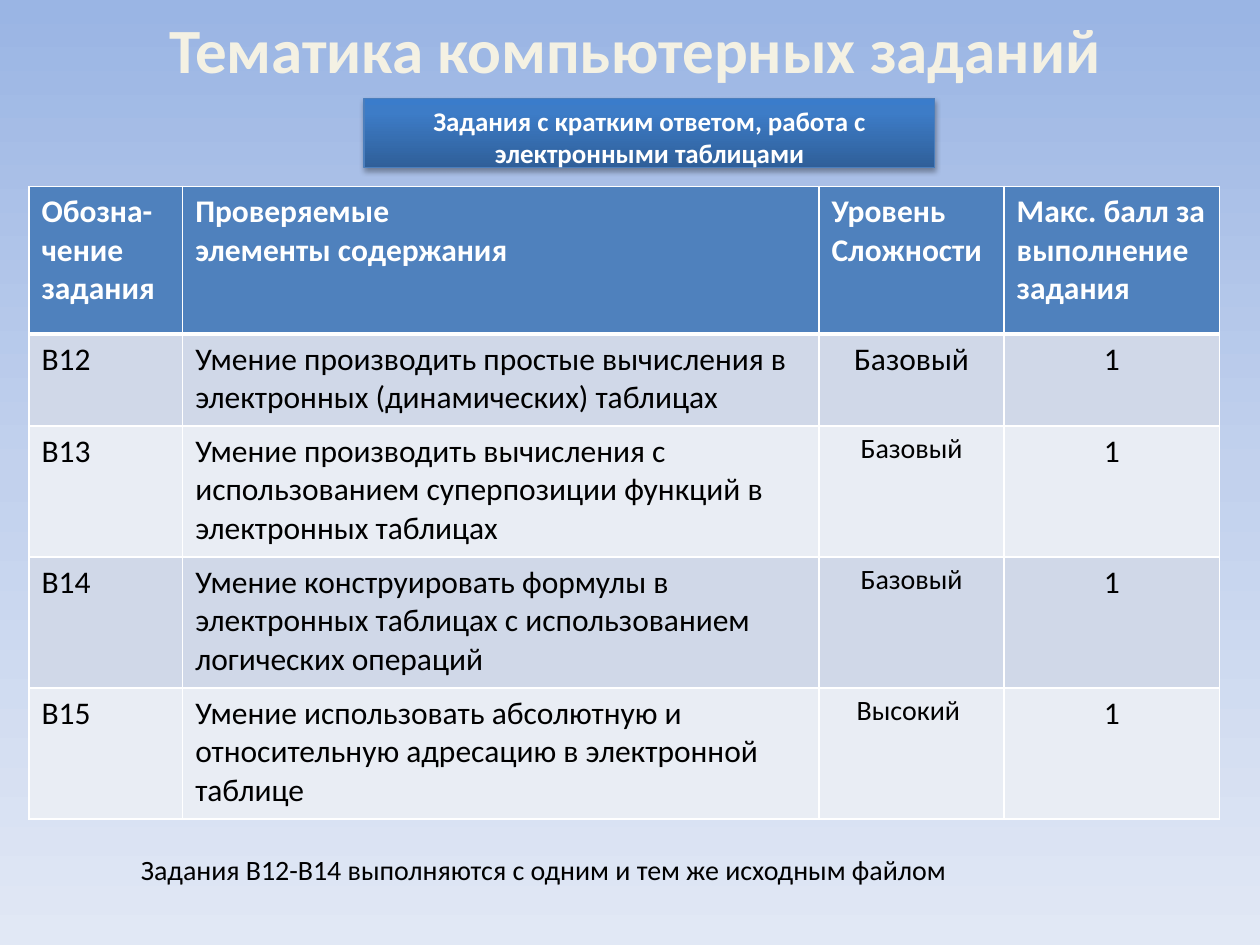
from lxml.etree import SubElement
from pptx import Presentation
from pptx.dml.color import RGBColor
from pptx.enum.shapes import MSO_SHAPE
from pptx.enum.text import MSO_ANCHOR, MSO_AUTO_SIZE, PP_ALIGN
from pptx.oxml.ns import qn
from pptx.util import Inches, Pt

WIDTH, HEIGHT = 10, 7.5
COLUMNS, ROWS = 100, 75

HEADERS = ["Обозна-чение\nзадания", "Проверяемые\nэлементы содержания",
           "Уровень\nСложности", "Макс. балл за выполнение задания"]
TASKS = [
    ("B12", "Умение производить простые вычисления в электронных (динамических) таблицах",
     "Базовый", 18),
    ("B13", "Умение производить вычисления с использованием суперпозиции функций в\n"
            "электронных таблицах", "Базовый", 16),
    ("B14", "Умение конструировать формулы в электронных таблицах с использованием\n"
            "логических операций", "Базовый", 16),
    ("B15", "Умение использовать абсолютную и относительную адресацию в электронной\n"
            "таблице", "Высокий ", 16),
]


def color(value):
    return RGBColor.from_string(value)


def across(columns):
    return Inches(WIDTH * columns / COLUMNS)


def down(rows):
    return Inches(HEIGHT * rows / ROWS)


class SlideBuilder:
    font = "Calibri"
    white = "FFFFFF"
    black = "000000"
    cream = "F4F1E3"
    header = "4F81BD"
    bands = ("D0D8E8", "E9EDF4")

    def __init__(self, presentation):
        self.slide = presentation.slides.add_slide(presentation.slide_layouts[5])

    def box(self, left, top, width, height):
        return across(left), down(top), across(width), down(height)

    def set_text(self, text_frame, text, size, ink, bold=False, align=PP_ALIGN.LEFT):
        text_frame.text = text
        for paragraph in text_frame.paragraphs:
            paragraph.alignment = align
            for run in paragraph.runs:
                run.font.name = self.font
                run.font.size = Pt(size)
                run.font.bold = bold
                run.font.color.rgb = color(ink)

    def gradient(self, fill, element, stops, angle):
        fill.gradient()
        fill.gradient_angle = angle
        stop_list = element.find(".//" + qn("a:gsLst"))
        for stop in list(stop_list):
            stop_list.remove(stop)
        for position, value in stops:
            stop = SubElement(stop_list, qn("a:gs"), pos=str(position * 1000))
            SubElement(stop, qn("a:srgbClr"), val=value)

    def background(self, stops):
        self.gradient(self.slide.background.fill, self.slide.element, stops, 270)

    def title(self, text, *place):
        shape = self.slide.shapes.title
        shape.left, shape.top, shape.width, shape.height = self.box(*place)
        self.set_text(shape.text_frame, text, 36, self.cream, True, PP_ALIGN.CENTER)
        shape.text_frame.paragraphs[0].line_spacing = Pt(33.2)
        shape.text_frame.vertical_anchor = MSO_ANCHOR.MIDDLE
        shape.text_frame.auto_size = MSO_AUTO_SIZE.SHAPE_TO_FIT_TEXT

    def banner(self, text, stops, *place):
        shape = self.slide.shapes.add_shape(MSO_SHAPE.RECTANGLE, *self.box(*place))
        self.gradient(shape.fill, shape.element, stops, 90)
        shape.line.color.rgb = color("4B7EBC")
        shape.line.width = Pt(0.75)
        self.shadow(shape)
        self.set_text(shape.text_frame, text, 15.4, self.white, True, PP_ALIGN.CENTER)
        shape.text_frame.word_wrap = True
        shape.text_frame.vertical_anchor = MSO_ANCHOR.TOP
        shape.text_frame.paragraphs[0].space_before = Pt(3)

    def shadow(self, shape):
        shape.shadow.inherit = False
        effects = shape.element.spPr.find(qn("a:effectLst"))
        outer = SubElement(effects, qn("a:outerShdw"), blurRad=str(Pt(3.1)),
                           dist=str(Pt(1.8)), dir="5400000", rotWithShape="0")
        ink = SubElement(outer, qn("a:srgbClr"), val=self.black)
        SubElement(ink, qn("a:alpha"), val="35000")

    def borders(self, cell, top, bottom):
        properties = cell._tc.get_or_add_tcPr()
        widths = {"a:lnL": 1, "a:lnR": 1, "a:lnT": top, "a:lnB": bottom}
        for index, (tag, width) in enumerate(widths.items()):
            line = properties.makeelement(qn(tag), {"w": str(Pt(width))})
            properties.insert(index, line)
            SubElement(SubElement(line, qn("a:solidFill")), qn("a:srgbClr"), val=self.white)

    def cell(self, cell, text, size, ink, fill, bold, align, top, bottom):
        self.set_text(cell.text_frame, text, size, ink, bold, align)
        cell.fill.solid()
        cell.fill.fore_color.rgb = color(fill)
        self.borders(cell, top, bottom)

    def table(self, headers, tasks, widths, heights, left, top):
        place = self.box(left, top, sum(widths), sum(heights))
        table = self.slide.shapes.add_table(len(heights), len(widths), *place).table
        for column, width in zip(table.columns, widths):
            column.width = across(width)
        for row, height in zip(table.rows, heights):
            row.height = down(height)
        for column, text in enumerate(headers):
            self.cell(table.cell(0, column), text, 18, self.white, self.header,
                      True, PP_ALIGN.LEFT, 1, 3)
        for row, (code, skill, level, level_size) in enumerate(tasks, 1):
            fill = self.bands[(row - 1) % 2]
            for column, text in enumerate((code, skill, level, "1")):
                size = level_size if column == 2 else 18
                align = PP_ALIGN.CENTER if column > 1 else PP_ALIGN.LEFT
                self.cell(table.cell(row, column), text, size, self.black, fill,
                          False, align, 3 if row == 1 else 1, 1)

    def note(self, text, *place):
        shape = self.slide.shapes.add_textbox(*self.box(*place))
        self.set_text(shape.text_frame, text, 16, self.black)
        shape.text_frame.word_wrap = False
        shape.text_frame.auto_size = MSO_AUTO_SIZE.SHAPE_TO_FIT_TEXT


def main():
    presentation = Presentation()
    presentation.slide_width = Inches(WIDTH)
    presentation.slide_height = Inches(HEIGHT)
    builder = SlideBuilder(presentation)
    builder.background([(0, "9AB5E4"), (50, "C2D1ED"), (100, "E1E8F5")])
    builder.title("Тематика компьютерных заданий", 3.9, 1.6, 93, 5.8)
    builder.table(HEADERS, TASKS, (12.2, 50.5, 14.7, 17.1),
                  (11.7, 7.3, 10.4, 10.4, 10.4), 2.3, 14.8)
    builder.banner("Задания с кратким ответом, работа с электронными таблицами",
                   [(0, "2F5F99"), (80, "3D7CC7"), (100, "3A7CCB")], 28.9, 7.8, 45.3, 5.5)
    builder.note("Задания B12-B14 выполняются с одним и тем же исходным файлом",
                 10.2, 67.2, 66.8, 3.7)
    presentation.save("out.pptx")


if __name__ == "__main__":
    main()
